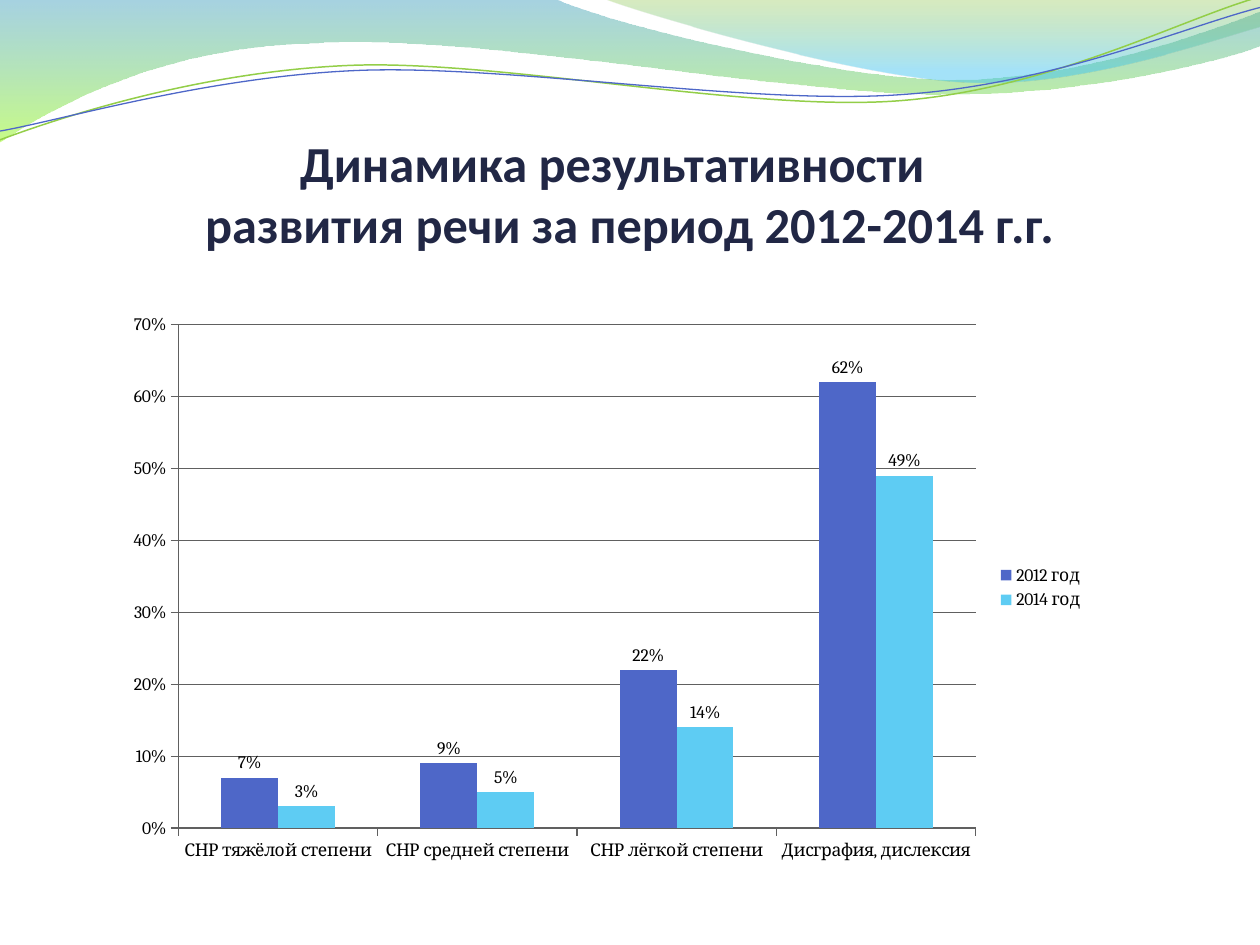
"""Build a slide with a wave header and a clustered column chart of speech results."""
from math import cos, radians, sin
from lxml.etree import SubElement
from pptx import Presentation
from pptx.chart.data import CategoryChartData
from pptx.dml.color import RGBColor
from pptx.enum.chart import XL_CHART_TYPE, XL_LABEL_POSITION, XL_LEGEND_POSITION, XL_TICK_MARK
from pptx.enum.text import MSO_ANCHOR, PP_ALIGN
from pptx.oxml.ns import qn
from pptx.util import Pt

COLORS = {
    "title": "212745", "text": "000000", "axis": "606060",
    "blue": "4E67C8", "sky": "5ECCF3", "green": "93CE48",
    "teal": "3B9CBF", "lime": "9CFA24", "olive": "7EBE2C", "cyan": "39C1F1",
}
TILT = 2.7
BANDS = [
    ([(0, 0), (317, -0.7), (342.7, 12.2, 478.1, 45.4, 545.8, 45.4),
      (614.2, 45.4, 689.8, 18.7, 720, 6.5), (720.7, 25.9),
      (707.8, 31.7, 626.4, 54.7, 537.1, 54), (447.8, 54, 275, 20.2, 185, 24.5),
      (92.9, 25.9, 33.1, 59.8, -0.7, 81.4), (0, 0)],
     [(0, "teal", 45), (1, "lime", 55)]),
    ([(344.9, -0.7), (366.5, 7.9, 491, 44.6, 553.7, 46.8),
      (616.3, 49.7, 691.9, 23, 720, 15.1), (720, 0), (344.9, -0.7)],
     [(0, "olive", 30), (0.8, "cyan", 45)]),
]
WAVES = [
    ([(0, 79.9), (34.6, 67, 113.8, 41, 199.4, 37.4),
      (284.4, 33.8, 427, 64.1, 513.4, 57.6), (599.8, 51.1, 675.4, 10.8, 718.6, -1.4)],
     (359.3, 41.4), "green", 0.85),
    ([(0, 74.9), (33.8, 69.1, 118.1, 43.9, 203.8, 40.3),
      (290.2, 36.7, 429.8, 60.5, 516.2, 54), (601.9, 48.2, 677.5, 15.1, 720, 4.3)],
     (359.6, 42.5), "blue", 0.75),
]
TITLE = [("Динамика результативности", 20), ("развития речи за период 2012-2014 г.г.", 0)]
CATEGORIES = ["СНР тяжёлой степени ", "СНР средней степени",
              "СНР лёгкой степени", "Дисграфия, дислексия "]
SERIES = [("2012 год", (0.07, 0.09, 0.22, 0.62), "blue"),
          ("2014 год", (0.03, 0.05, 0.14, 0.49), "sky")]


def rgb(name):
    """Return the named colour."""
    return RGBColor.from_string(COLORS[name])


def set_attrs(obj, values):
    """Set each attribute of obj from a dict."""
    for name, value in values.items():
        setattr(obj, name, value)


def format_font(font, name, size, color, bold=False):
    """Apply typeface, size, colour and weight."""
    set_attrs(font, {"name": name, "size": Pt(size), "bold": bold})
    font.color.rgb = rgb(color)


def pairs(seg):
    """Split a flat segment into points."""
    return list(zip(seg[::2], seg[1::2]))


def turn(seg, center, angle):
    """Rotate the points of a segment clockwise about a centre."""
    a, (cx, cy) = radians(angle), center
    return tuple(v for x, y in pairs(seg) for v in (
        cx + (x - cx) * cos(a) - (y - cy) * sin(a),
        cy + (x - cx) * sin(a) + (y - cy) * cos(a)))


def add_path(s, segments, close):
    """Add a freeform whose six-number segments are cubic curves."""
    points = [(Pt(x), Pt(y)) for seg in segments for x, y in pairs(seg)]
    builder = s.shapes.build_freeform(*points[0])
    builder.add_line_segments(points[1:], close=close)
    sp = builder.convert_to_shape()
    sp.shadow.inherit = False
    lines = iter(list(sp._element.spPr.iter(qn("a:lnTo"))))
    for seg in segments[1:]:
        group = [next(lines) for _ in pairs(seg)]
        if len(group) == 3:
            curve = group[0].makeelement(qn("a:cubicBezTo"))
            group[0].addprevious(curve)
            for line in group:
                curve.append(line[0])
                line.getparent().remove(line)
    return sp


def add_band(s, segments, stops):
    """Add a filled band with a translucent vertical gradient."""
    sp = add_path(s, segments, True)
    sp.line.fill.background()
    sp.fill.gradient()
    sp.fill.gradient_angle = 270
    for stop, (position, color, _) in zip(sp.fill.gradient_stops, stops):
        stop.position = position
        stop.color.rgb = rgb(color)
    for clr, (_, _, alpha) in zip(sp._element.spPr.iter(qn("a:srgbClr")), stops):
        SubElement(clr, qn("a:alpha")).set("val", str(alpha * 1000))


def add_wave(s, segments, center, color, width):
    """Add a tilted open curved line."""
    sp = add_path(s, [turn(seg, center, TILT) for seg in segments], False)
    sp.rotation = 360 - TILT
    sp.fill.background()
    sp.line.color.rgb = rgb(color)
    sp.line.width = Pt(width)


def add_title(s):
    """Place and format the title placeholder."""
    sp = s.shapes.title
    set_attrs(sp, {"left": Pt(36), "top": Pt(71), "width": Pt(648), "height": Pt(108)})
    tf = sp.text_frame
    set_attrs(tf, {"vertical_anchor": MSO_ANCHOR.BOTTOM, "word_wrap": True, "margin_left": 0,
                   "margin_right": 0, "margin_top": Pt(3.6), "margin_bottom": Pt(34.3)})
    for i, (text, indent) in enumerate(TITLE):
        p = tf.add_paragraph() if i else tf.paragraphs[0]
        set_attrs(p, {"alignment": PP_ALIGN.CENTER, "line_spacing": 1.0, "space_before": Pt(0)})
        p._p.get_or_add_pPr().set("marR", str(Pt(indent)))
        r = p.add_run()
        r.text = text
        format_font(r.font, "Calibri", 28.8, "title", True)


def format_axis(axis):
    """Style the axis line and its ticks."""
    set_attrs(axis, {"major_tick_mark": XL_TICK_MARK.OUTSIDE,
                     "minor_tick_mark": XL_TICK_MARK.NONE})
    axis.format.line.color.rgb = rgb("axis")
    axis.format.line.width = Pt(0.75)


def add_column_chart(s):
    """Add the clustered column chart."""
    data = CategoryChartData(number_format="0%")
    data.categories = CATEGORIES
    for name, values, _ in SERIES:
        data.add_series(name, values)
    chart = s.shapes.add_chart(XL_CHART_TYPE.COLUMN_CLUSTERED, Pt(65.1), Pt(173.4),
                               Pt(561.6), Pt(324.7), data).chart
    set_attrs(chart, {"has_title": False, "has_legend": True})
    format_font(chart.font, "Cambria", 10, "text")
    set_attrs(chart.legend, {"position": XL_LEGEND_POSITION.RIGHT, "include_in_layout": False})
    for axis in (chart.category_axis, chart.value_axis):
        format_axis(axis)
    axis = chart.value_axis
    set_attrs(axis, {"minimum_scale": 0, "maximum_scale": 0.7, "major_unit": 0.1,
                     "has_major_gridlines": True})
    set_attrs(axis.tick_labels, {"number_format": "0%", "number_format_is_linked": False})
    axis.major_gridlines.format.line.color.rgb = rgb("axis")
    axis.major_gridlines.format.line.width = Pt(0.75)
    plot = chart.plots[0]
    set_attrs(plot, {"gap_width": 150, "overlap": 0, "vary_by_categories": False})
    for series, (_, _, color) in zip(plot.series, SERIES):
        series.format.fill.solid()
        series.format.fill.fore_color.rgb = rgb(color)
        set_attrs(series.data_labels, {
            "show_value": True, "number_format": "0%", "number_format_is_linked": False,
            "position": XL_LABEL_POSITION.OUTSIDE_END})


def main():
    """Build and save the slide."""
    prs = Presentation()
    set_attrs(prs, {"slide_width": Pt(720), "slide_height": Pt(540)})
    s = prs.slides.add_slide(prs.slide_layouts[5])
    for band in BANDS:
        add_band(s, *band)
    for wave in WAVES:
        add_wave(s, *wave)
    add_title(s)
    add_column_chart(s)
    prs.save("out.pptx")


if __name__ == "__main__":
    main()
